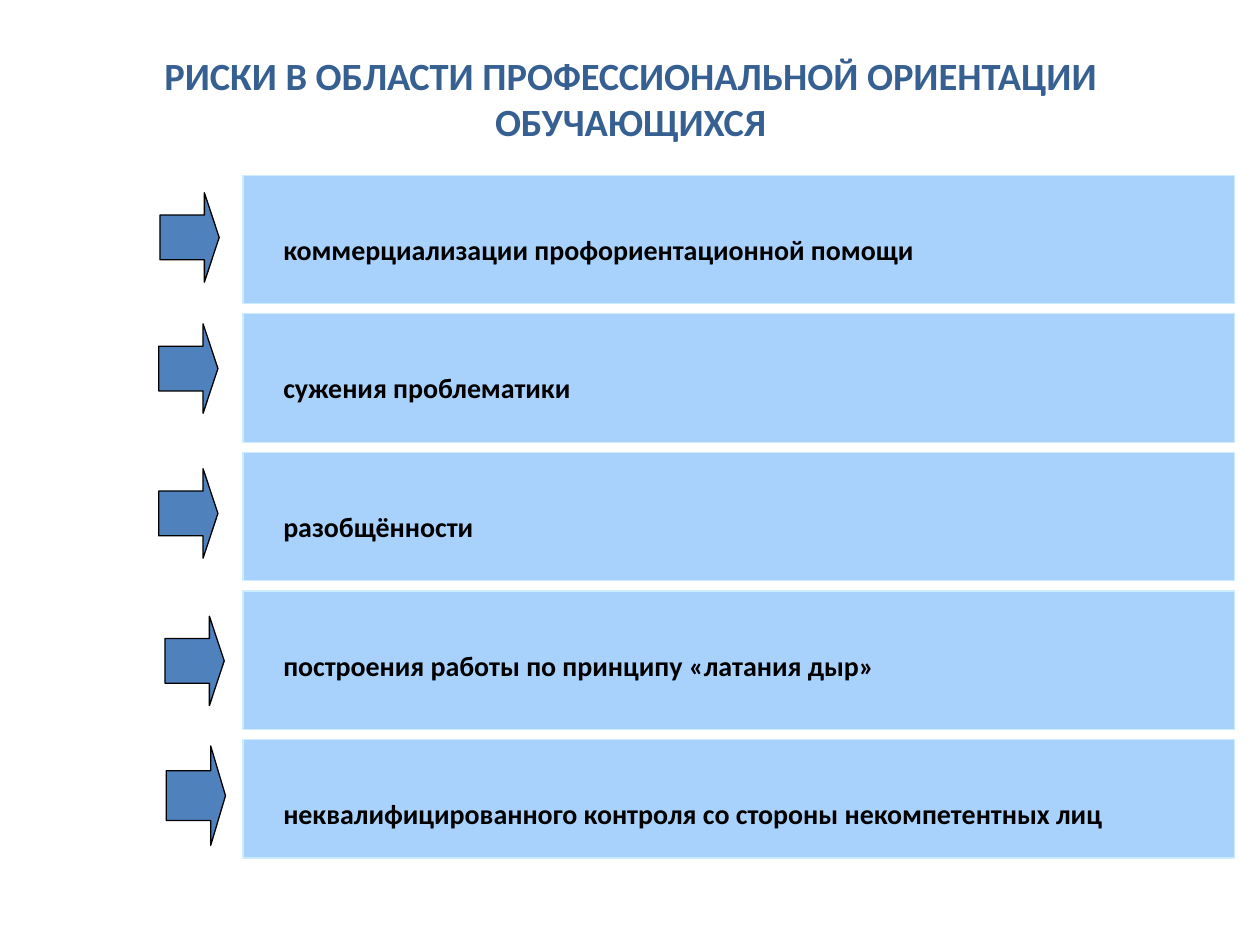
from dataclasses import dataclass
from pptx import Presentation
from pptx.dml.color import RGBColor as RGB
from pptx.enum.shapes import MSO_SHAPE as Kind
from pptx.enum.text import MSO_ANCHOR as Anchor, MSO_AUTO_SIZE as Fit, PP_ALIGN as Align
from pptx.util import Inches, Pt

# Content: text, bar height, arrow left, arrow top, arrow height
TITLE = "РИСКИ В ОБЛАСТИ ПРОФЕССИОНАЛЬНОЙ ОРИЕНТАЦИИ ОБУЧАЮЩИХСЯ"
RISKS = [
    ("коммерциализации профориентационной помощи", 1.02, 1.27, 1.53, 0.71),
    ("сужения проблематики", 1.02, 1.26, 2.57, 0.71),
    ("разобщённости", 1.02, 1.26, 3.72, 0.71),
    ("построения работы по принципу «латания дыр»", 1.10, 1.31, 4.89, 0.71),
    ("неквалифицированного контроля со стороны некомпетентных лиц", 0.94, 1.32, 5.92, 0.79),
]


@dataclass(frozen=True)
class Theme:
    font: str = "Calibri"
    head: str = "376092"
    ink: str = "000000"
    bar: str = "A8D2FC"
    edge: str = "CCECFF"
    arrow: str = "4F81BD"
    big: int = 22
    body: int = 16
    line: float = 0.75


THEME = Theme()

# Grid in inches
TOP, GAP = 1.39, 0.08
BAR_X, BAR_W = 1.93, 7.87
TEXT_X, TEXT_W, TEXT_H = 2.15, 7.23, 0.69
ARROW_W = 0.47


def box(*sizes):
    return [Inches(size) for size in sizes]


def style(para, size, color):
    font = para.font
    font.name, font.size, font.bold = THEME.font, Pt(size), True
    font.color.rgb = RGB.from_string(color)


def draw(shapes, kind, place, fill, edge):
    shape = shapes.add_shape(kind, *box(*place))
    shape.shadow.inherit = False
    shape.fill.solid()
    shape.fill.fore_color.rgb = RGB.from_string(fill)
    shape.line.color.rgb = RGB.from_string(edge)
    shape.line.width = Pt(THEME.line)
    return shape


def add_title(slide):
    title = slide.shapes.title
    title.left, title.top, title.width, title.height = box(0.43, 0.36, 9.15, 0.84)
    frame = title.text_frame
    frame.text = TITLE
    frame.word_wrap, frame.auto_size = True, Fit.NONE
    frame.vertical_anchor = Anchor.MIDDLE
    frame.paragraphs[0].alignment = Align.CENTER
    style(frame.paragraphs[0], THEME.big, THEME.head)


def add_bar(slide, text, top, height):
    group = slide.shapes.add_group_shape()
    draw(group.shapes, Kind.RECTANGLE, (BAR_X, top, BAR_W, height), THEME.bar, THEME.edge)
    label = group.shapes.add_textbox(*box(TEXT_X, top + GAP, TEXT_W, TEXT_H))
    frame = label.text_frame
    frame.text = text
    frame.word_wrap = True
    frame.vertical_anchor = Anchor.BOTTOM
    style(frame.paragraphs[0], THEME.body, THEME.ink)


def add_arrow(slide, left, top, height):
    arrow = draw(slide.shapes, Kind.RIGHT_ARROW, (left, top, ARROW_W, height),
                 THEME.arrow, THEME.ink)
    arrow.adjustments[0], arrow.adjustments[1] = 0.5, 0.25


def main():
    deck = Presentation()
    deck.slide_width, deck.slide_height = box(10, 7.5)
    slide = deck.slides.add_slide(deck.slide_layouts[5])
    add_title(slide)

    # Stack the bars, each with its arrow
    top = TOP
    for text, height, left, tip, tall in RISKS:
        add_bar(slide, text, top, height)
        add_arrow(slide, left, tip, tall)
        top += height + GAP
    deck.save("out.pptx")


if __name__ == "__main__":
    main()
